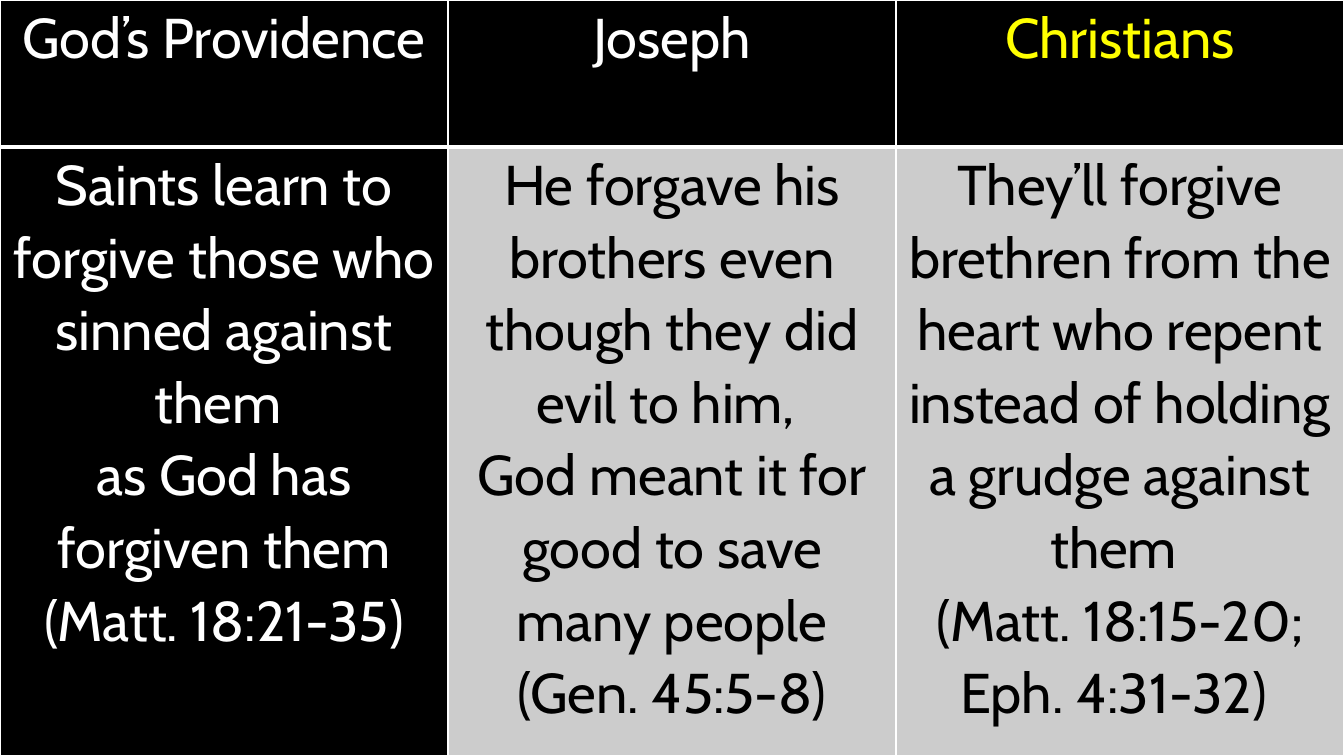
from dataclasses import dataclass

from lxml import etree
from pptx import Presentation
from pptx.dml.color import RGBColor
from pptx.enum.text import PP_ALIGN
from pptx.oxml.ns import qn
from pptx.table import _Cell
from pptx.util import Emu, Pt

CENTER = PP_ALIGN.CENTER
EMU_PER_PX = 9525
SLIDE_W, SLIDE_H = 1280, 720
ROW_HEIGHTS = (140, 580)
INSET = 7


@dataclass(frozen=True)
class Theme:
    font: str = "Cabin"
    size: int = 40
    line_spacing: float = 1.07
    black: str = "000000"
    white: str = "FFFFFF"
    yellow: str = "FFFF00"
    gray: str = "CCCCCC"
    rule: int = 1
    header_rule: int = 3


@dataclass(frozen=True)
class CellSpec:
    text: str
    color: str
    fill: str
    bottom: int = 1


THEME = Theme()


def px(n: int) -> Emu:
    return Emu(n * EMU_PER_PX)


def header(text: str, color: str) -> CellSpec:
    return CellSpec(text, color, THEME.black, THEME.header_rule)


ROWS = (
    (
        header("God’s Providence", THEME.white),
        header("Joseph", THEME.white),
        header("Christians", THEME.yellow),
    ),
    (
        CellSpec(
            "Saints learn to forgive those who sinned against them \n"
            "as God has forgiven them\n"
            "(Matt. 18:21-35)",
            THEME.white, THEME.black,
        ),
        CellSpec(
            "He forgave his brothers even though they did evil to him, \n"
            "God meant it for good to save many people\n"
            "(Gen. 45:5-8)",
            THEME.black, THEME.gray,
        ),
        CellSpec(
            "They’ll forgive brethren from the heart who repent "
            "instead of holding a grudge against them \n"
            "(Matt. 18:15-20; Eph. 4:31-32) ",
            THEME.black, THEME.gray,
        ),
    ),
)


def add_border(cell: _Cell, side: str, width: int) -> None:
    tc_pr = cell._tc.get_or_add_tcPr()
    ln = etree.SubElement(tc_pr, qn(f"a:ln{side}"), w=str(Pt(width)))
    fill = etree.SubElement(ln, qn("a:solidFill"))
    etree.SubElement(fill, qn("a:srgbClr"), val=THEME.white)


def fill_cell(cell: _Cell, spec: CellSpec, top: int) -> None:
    widths = {"L": THEME.rule, "R": THEME.rule, "T": top, "B": spec.bottom}
    for side, width in widths.items():
        add_border(cell, side, width)
    cell.fill.solid()
    cell.fill.fore_color.rgb = RGBColor.from_string(spec.fill)
    cell.margin_left = cell.margin_right = px(INSET)
    cell.margin_top = cell.margin_bottom = 0
    tf = cell.text_frame
    tf.text = spec.text
    for p in tf.paragraphs:
        p.alignment = CENTER
        p.line_spacing = THEME.line_spacing
        for r in p.runs:
            r.font.name = THEME.font
            r.font.size = Pt(THEME.size)
            r.font.bold = False
            r.font.color.rgb = RGBColor.from_string(spec.color)


def main() -> None:
    prs = Presentation()
    prs.slide_width, prs.slide_height = px(SLIDE_W), px(SLIDE_H)
    s = prs.slides.add_slide(prs.slide_layouts[6])
    s.background.fill.solid()
    s.background.fill.fore_color.rgb = RGBColor.from_string(THEME.black)

    table = s.shapes.add_table(
        len(ROWS), len(ROWS[0]), 0, 0, px(SLIDE_W), px(SLIDE_H)
    ).table
    table.horz_banding = False
    top_rule = THEME.rule
    for i, (height, specs) in enumerate(zip(ROW_HEIGHTS, ROWS)):
        table.rows[i].height = px(height)
        for j, spec in enumerate(specs):
            fill_cell(table.cell(i, j), spec, top_rule)
        top_rule = specs[0].bottom

    prs.save("out.pptx")


if __name__ == "__main__":
    main()
